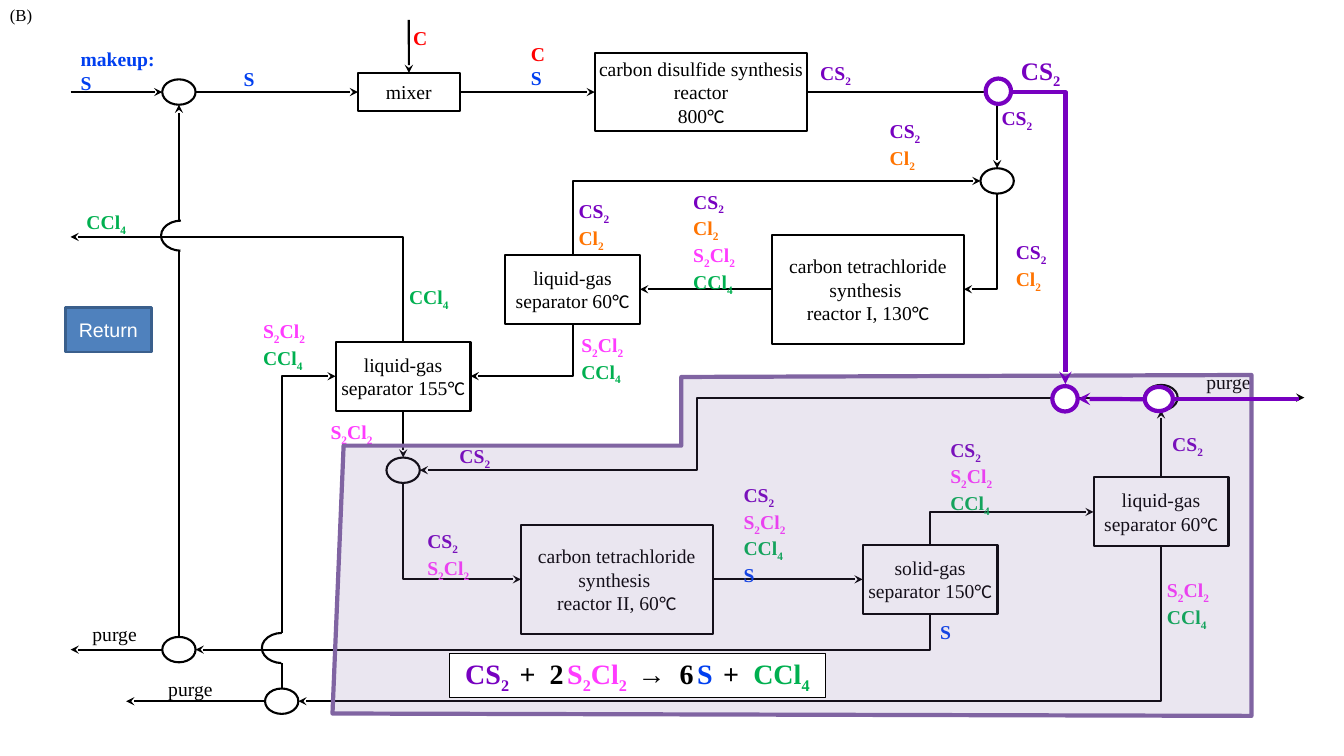
import copy
import itertools
from dataclasses import dataclass

import pptx
import pptx.dml.color
import pptx.enum.dml
import pptx.enum.shapes
import pptx.enum.text
import pptx.oxml
import pptx.oxml.ns
import pptx.util

Cm, Pt = pptx.util.Cm, pptx.util.Pt
SHAPE = pptx.enum.shapes.MSO_SHAPE
LINK = pptx.enum.shapes.MSO_CONNECTOR
CENTER = pptx.enum.text.PP_ALIGN.CENTER
TOP, LEFT, BOTTOM, RIGHT = range(4)


@dataclass(frozen=True)
class Theme:
    black: str = "000000"
    white: str = "FFFFFF"
    carbon: str = "FF0000"
    sulfur: str = "003FF0"
    disulfide: str = "7700C0"
    chlorine: str = "FF7401"
    chloride: str = "FF3BFF"
    tetrachloride: str = "00B050"
    zone: str = "8064A2"
    button: str = "4F81BD"
    button_edge: str = "3A5F8C"
    serif: str = "Times New Roman"
    degree: str = "Calibri"
    sans: str = "Arial"
    corner: int = 12
    body: int = 14
    large: int = 18
    equation: int = 20
    thin: float = 1.5
    thick: float = 3


THEME = Theme()
SPECIES = {"C": THEME.carbon, "S": THEME.sulfur, "makeup:": THEME.sulfur,
           "CS2": THEME.disulfide, "Cl2": THEME.chlorine,
           "S2Cl2": THEME.chloride, "CCl4": THEME.tetrachloride}
NODE = (0.84, 0.64)
SEPARATOR = (3.4, 1.74)
REACTOR = (4.83, 2.74)


def rgb(color):
    return pptx.dml.color.RGBColor.from_string(color)


def style(span, color=THEME.black, size=THEME.body, bold=False, font=THEME.serif):
    span.font.name, span.font.size, span.font.bold = font, Pt(size), bold
    span.font.color.rgb = rgb(color)


def add_formula(para, name, size):
    """Write a species name in its colour, digits lowered."""
    for lowered, letters in itertools.groupby(name, str.isdigit):
        span = para.add_run()
        span.text = "".join(letters)
        style(span, SPECIES.get(name, THEME.black), size, name in SPECIES)
        if lowered:
            span.font._element.set("baseline", "-25000")


@dataclass
class Area:
    """A region of the page; its parts are placed in cm from its corner."""
    page: object
    left: float
    top: float

    def point(self, x, y):
        return Cm(self.left + x), Cm(self.top + y)

    def shape(self, kind, x, y, size, fill=None, line=THEME.black, width=THEME.thin):
        box = self.page.shapes.add_shape(kind, *self.point(x, y), *map(Cm, size))
        box.shadow.inherit = False
        if fill:
            box.fill.solid()
            box.fill.fore_color.rgb = rgb(fill)
        else:
            box.fill.background()
        box.line.color.rgb, box.line.width = rgb(line), Pt(width)
        return box

    def node(self, x, y, size=NODE, **look):
        return self.shape(SHAPE.OVAL, x, y, size, **look)

    def unit(self, x, y, size, text):
        box = self.shape(SHAPE.RECTANGLE, x, y, size)
        frame = box.text_frame
        frame.word_wrap = True
        frame.margin_left = frame.margin_right = frame.margin_top = frame.margin_bottom = 0
        frame.vertical_anchor = pptx.enum.text.MSO_ANCHOR.MIDDLE
        head, degree, _ = text.partition("°C")
        frame.text = head
        for para in frame.paragraphs:
            para.alignment = CENTER
            for span in para.runs:
                style(span)
            for line_break in para._p.findall(pptx.oxml.ns.qn("a:br")):
                line_break.append(copy.deepcopy(para.runs[0].font._element))
        if degree:
            span = frame.paragraphs[-1].add_run()
            span.text = degree
            style(span, font=THEME.degree)
        return box

    def label(self, x, y, *names, size=THEME.body):
        width = 0.7 + 0.35 * max(map(len, names))
        height = 0.26 + 0.6 * len(names) * size / THEME.body
        box = self.page.shapes.add_textbox(*self.point(x, y), Cm(width), Cm(height))
        frame = box.text_frame
        frame.word_wrap = True
        for number, name in enumerate(names):
            para = frame.add_paragraph() if number else frame.paragraphs[0]
            add_formula(para, name, size)

    def line(self, start, end, color=THEME.black, width=THEME.thin,
             arrow=True, kind=LINK.STRAIGHT, begin=None, finish=None):
        link = self.page.shapes.add_connector(kind, *self.point(*start), *self.point(*end))
        link.line.color.rgb, link.line.width = rgb(color), Pt(width)
        if arrow:
            tail = pptx.oxml.parse_xml(
                f'<a:tailEnd {pptx.oxml.ns.nsdecls("a")} type="stealth"/>')
            link.line._get_or_add_ln().append(tail)
        link._element.spPr.append(
            pptx.oxml.parse_xml(f'<a:effectLst {pptx.oxml.ns.nsdecls("a")}/>'))
        if begin:
            link.begin_connect(*begin)
        if finish:
            link.end_connect(*finish)
        return link

    def elbow(self, start, end, upright=True, **look):
        """One-corner arrow; upright ones leave vertically."""
        link = self.line(start, end, kind=LINK.ELBOW, **look)
        link._element.spPr.prstGeom.set("prst", "bentConnector2")
        if upright:
            across, down = end[0] - start[0], end[1] - start[1]
            link.left, link.top = self.point((start[0] + end[0] - abs(down)) / 2,
                                             (start[1] + end[1] - abs(across)) / 2)
            link.width, link.height = Cm(abs(down)), Cm(abs(across))
            frame = link._element.spPr.xfrm
            frame.flipH, frame.flipV = across * down > 0, False
            frame.set("rot", str((270 if across > 0 else 90) * 60000))

    def hop(self, x, y):
        """Gap and half circle where two lines cross."""
        self.line((x + 0.51, y), (x + 0.51, y + 0.76), THEME.white, 4.5, arrow=False)
        arc = self.shape(SHAPE.ARC, x, y, (1.02, 0.76))
        arc.adjustments[0], arc.adjustments[1] = 93.4 * 0.6, 268.6 * 0.6


def draw_disulfide_row(area):
    area.node(2.59, 1.5)
    area.node(23.21, 3.74)
    mixer = area.unit(7.52, 1.34, (2.57, 0.96), "mixer")
    reactor = area.unit(13.49, 0.83, (5.36, 1.98),
                        "carbon disulfide synthesis reactor\n800°C")
    area.line((0.28, 1.82), (2.59, 1.82))
    area.line((3.43, 1.82), (7.52, 1.82), finish=(mixer, LEFT))
    area.line((10.09, 1.82), (13.49, 1.82), begin=(mixer, RIGHT), finish=(reactor, LEFT))
    area.line((8.8, 0), (8.8, 1.34), finish=(mixer, TOP))
    area.elbow((18.85, 1.82), (23.63, 3.74), upright=False)
    for x, y, *names in ((0.28, 0.57, "makeup:", "S"), (4.39, 1.07, "S"),
                         (11.63, 0.44, "C", "S"), (8.66, 0.03, "C"),
                         (18.92, 0.92, "CS2"), (23.49, 2.04, "CS2"),
                         (20.67, 2.37, "CS2", "Cl2")):
        area.label(x, y, *names)


def draw_recycle(area):
    area.node(2.59, 14.05)
    area.node(5.18, 15.35)
    area.line((3.01, 14.05), (3.01, 0.64))
    area.elbow((5.6, 15.35), (6.96, 7.48))
    area.hop(5.1, 13.95)
    area.elbow((21.94, 13.47), (3.43, 14.37))
    area.elbow((27.76, 11.77), (6.02, 15.67))
    area.line((2.59, 14.37), (0.28, 14.37))
    area.line((5.18, 15.67), (1.68, 15.67))
    area.label(2.49, 14.94, "purge")
    area.label(0.58, 13.54, "purge")


def draw_first_reactor(area):
    reactor = area.unit(17.96, 1.92, REACTOR,
                        "carbon tetrachloride synthesis \vreactor I, 130°C")
    cool = area.unit(11.23, 2.42, SEPARATOR, "liquid-gas separator 60°C")
    warm = area.unit(6.96, 4.61, SEPARATOR, "liquid-gas separator 155°C")
    area.line((17.96, 3.29), (14.63, 3.29), begin=(reactor, LEFT), finish=(cool, RIGHT))
    area.line((8.66, 6.35), (8.66, 7.53), begin=(warm, BOTTOM))
    area.hop(2.56, 1.56)
    for start, end in (((23.63, 0.88), (22.79, 3.29)), ((12.93, 2.42), (23.21, 0.56)),
                       ((12.93, 4.16), (10.36, 5.48)), ((8.66, 4.61), (0.28, 1.97))):
        area.elbow(start, end)
    for x, y, *names in ((23.85, 1.92, "CS2", "Cl2"), (12.83, 0.9, "CS2", "Cl2"),
                         (15.72, 0.65, "CS2", "Cl2", "S2Cl2", "CCl4"),
                         (12.9, 4.26, "S2Cl2", "CCl4"), (4.88, 3.92, "S2Cl2", "CCl4"),
                         (8.56, 3.06, "CCl4"), (0.43, 1.16, "CCl4")):
        area.label(x, y, *names)


def draw_second_reactor(area):
    area.node(20.84, 0.7)
    area.node(1.74, 2.53)
    reactor = area.unit(5.13, 4.23, REACTOR,
                        "carbon tetrachloride synthesis \vreactor II, 60°C")
    solid = area.unit(13.74, 4.73, SEPARATOR, "solid-gas separator 150°C")
    liquid = area.unit(19.56, 3.03, SEPARATOR, "liquid-gas separator 60°C")
    area.line((9.96, 5.6), (13.74, 5.6), begin=(reactor, RIGHT), finish=(solid, LEFT))
    area.line((21.26, 3.03), (21.26, 1.34), begin=(liquid, TOP))
    area.line((21.68, 1.02), (24.87, 1.02))
    area.elbow((2.16, 3.17), (5.13, 5.6))
    area.elbow((15.44, 4.73), (19.56, 3.9))
    back = area.line((20.84, 1.02), (2.58, 2.85), kind=LINK.ELBOW)
    guide = pptx.oxml.parse_xml(
        f'<a:gd {pptx.oxml.ns.nsdecls("a")} name="adj1" fmla="val 61800"/>')
    back._element.spPr.prstGeom.get_or_add_avLst().append(guide)
    for x, y, *names in ((0.08, 1.46, "S2Cl2"), (3.33, 2.07, "CS2"),
                         (2.52, 4.21, "CS2", "S2Cl2"),
                         (10.49, 3.04, "CS2", "S2Cl2", "CCl4", "S"),
                         (15.7, 1.9, "CS2", "S2Cl2", "CCl4"), (15.44, 6.49, "S"),
                         (21.16, 5.45, "S2Cl2", "CCl4"), (21.29, 1.77, "CS2"),
                         (22.15, 0.2, "purge")):
        area.label(x, y, *names)


def draw_highlight(area):
    # Tinted zone
    corners = [area.point(x, y) for x, y in (
        (0.28, 10.23), (8.79, 10.23), (8.79, 8.5), (23.16, 8.45), (23.16, 17.04), (0, 16.98))]
    builder = area.page.shapes.build_freeform(*corners[0])
    builder.add_line_segments(corners[1:], close=True)
    zone = builder.convert_to_shape()
    zone.shadow.inherit = False
    zone.fill.solid()
    zone.fill.fore_color.rgb = zone.line.color.rgb = rgb(THEME.zone)
    zone.line.width = Pt(THEME.thick)
    tint = zone._element.spPr.find(".//" + pptx.oxml.ns.qn("a:srgbClr"))
    tint.append(pptx.oxml.parse_xml(
        f'<a:alpha {pptx.oxml.ns.nsdecls("a")} val="16000"/>'))

    # Reaction equation
    box = area.shape(SHAPE.RECTANGLE, 2.95, 15.46, (9.47, 1.12), THEME.white, width=0.75)
    box.text_frame.word_wrap = False
    para = box.text_frame.paragraphs[0]
    para.alignment = CENTER
    for part in ("CS2", " + 2", "S2Cl2", " → 6", "S", " + ", "CCl4"):
        if part in SPECIES:
            add_formula(para, part, THEME.equation)
        else:
            span = para.add_run()
            span.text = part
            style(span, size=THEME.equation, bold=True)
            span.font._element.set("spc", "250")

    # Carbon disulfide route
    bold = dict(color=THEME.disulfide, width=THEME.thick)
    ring = dict(fill=THEME.white, line=THEME.disulfide, width=THEME.thick)
    area.line((21.16, 9.06), (24.36, 9.06), arrow=False, **bold)
    area.elbow((17.1, 1.32), (18.47, 8.68), upright=False, **bold)
    area.node(18.14, 8.73, (0.64, 0.64), **ring)
    area.node(20.47, 8.75, (0.71, 0.61), **ring)
    area.line((20.47, 9.06), (18.78, 9.05), **bold)
    area.label(17.1, 0.27, "CS2", size=THEME.large)
    area.node(16.46, 0.98, (0.64, 0.64), **ring)


def draw_navigation(area):
    area.label(0, 0, "(B)", size=THEME.corner)
    button = area.shape(SHAPE.ACTION_BUTTON_CUSTOM, 1.65, 7.75, (2.16, 1.12),
                        THEME.button, THEME.button_edge, 2)
    button.text_frame.text = "Return"
    button.text_frame.vertical_anchor = pptx.enum.text.MSO_ANCHOR.MIDDLE
    para = button.text_frame.paragraphs[0]
    para.alignment = CENTER
    style(para.runs[0], THEME.white, font=THEME.sans)


def main():
    deck = pptx.Presentation()
    deck.slide_width, deck.slide_height = Cm(33.87), Cm(19.05)
    page = deck.slides.add_slide(deck.slide_layouts[6])
    draw_disulfide_row(Area(page, 1.5, 0.5))
    draw_recycle(Area(page, 1.5, 2))
    draw_first_reactor(Area(page, 1.5, 4))
    draw_second_reactor(Area(page, 8, 9))
    draw_highlight(Area(page, 8.38, 1))
    draw_navigation(Area(page, 0, 0))
    deck.save("out.pptx")


if __name__ == "__main__":
    main()
